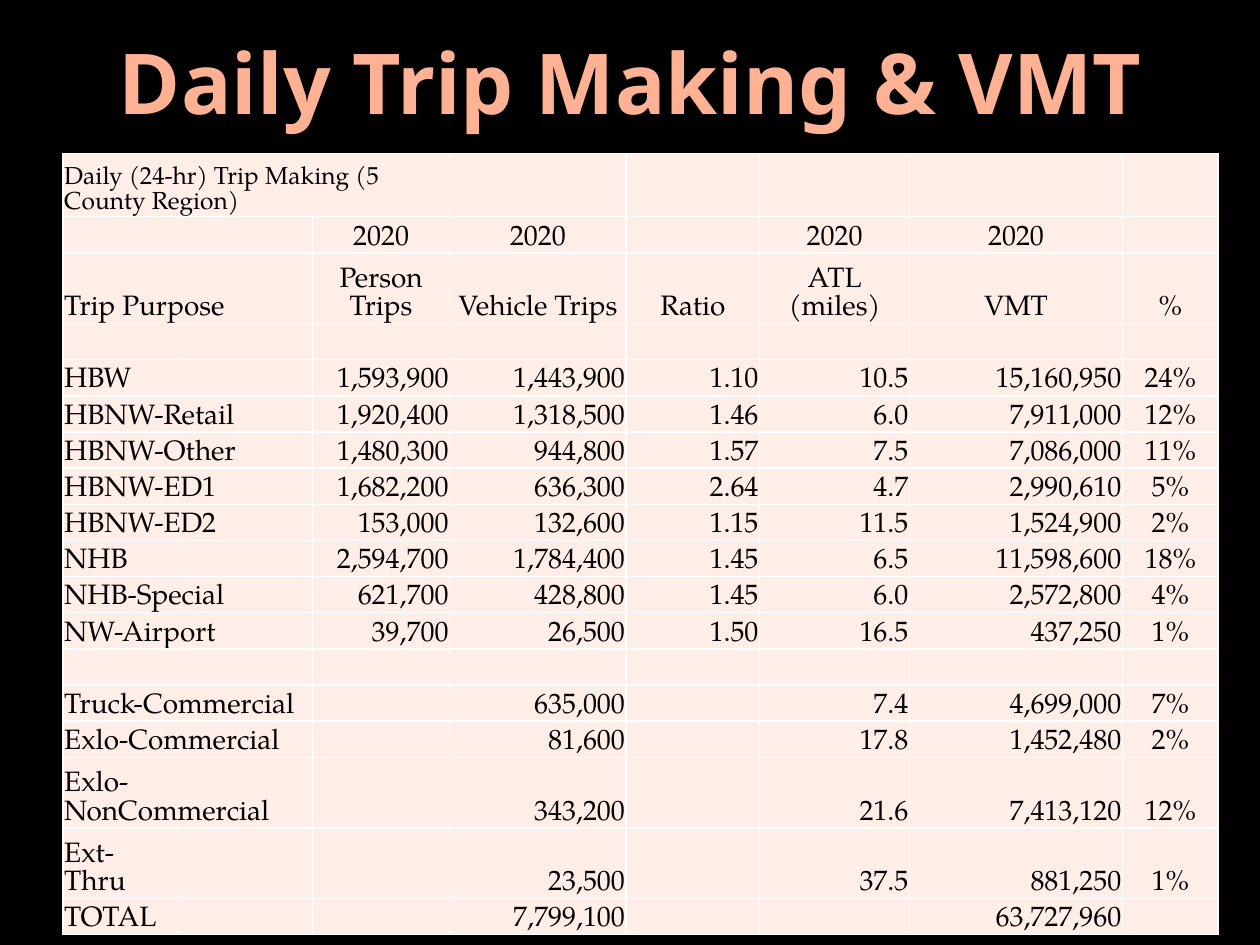
from dataclasses import dataclass

from lxml import etree
from pptx import Presentation
from pptx.dml.color import RGBColor
from pptx.enum.text import MSO_ANCHOR, PP_ALIGN
from pptx.oxml.ns import qn
from pptx.util import Inches, Pt

LEFT, CENTER, RIGHT = PP_ALIGN.LEFT, PP_ALIGN.CENTER, PP_ALIGN.RIGHT
MIDDLE, BOTTOM = MSO_ANCHOR.MIDDLE, MSO_ANCHOR.BOTTOM


@dataclass(frozen=True)
class Theme:
    background: str = "000000"
    title_stops: tuple = ((0, "FFB194"), (73, "FFB194"), (100, "FFA37C"))
    title_angle: int = 80
    cell_fill: str = "FFEDE8"
    border: str = "FFFFFF"
    text: str = "000000"
    title_font: str = "Noto Sans"
    table_font: str = "TeX Gyre Pagella"
    title_size: int = 48
    caption_size: int = 14
    table_size: int = 16
    border_width: int = 1


# Table content: label, person trips, vehicle trips, ratio, ATL, VMT, share
CAPTION = "Daily (24-hr) Trip Making (5 County Region)"
BLANK = [""] * 7
HEADERS = [
    ["", "2020", "2020", "", "2020", "2020", ""],
    ["Trip Purpose", "Person Trips", "Vehicle Trips", "Ratio", "ATL (miles)", "VMT", "%"],
]
TRIPS = [
    ["HBW", "1,593,900", "1,443,900", "1.10", "10.5", "15,160,950", "24%"],
    ["HBNW-Retail", "1,920,400", "1,318,500", "1.46", "6.0", "7,911,000", "12%"],
    ["HBNW-Other", "1,480,300", "944,800", "1.57", "7.5", "7,086,000", "11%"],
    ["HBNW-ED1", "1,682,200", "636,300", "2.64", "4.7", "2,990,610", "5%"],
    ["HBNW-ED2", "153,000", "132,600", "1.15", "11.5", "1,524,900", "2%"],
    ["NHB", "2,594,700", "1,784,400", "1.45", "6.5", "11,598,600", "18%"],
    ["NHB-Special", "621,700", "428,800", "1.45", "6.0", "2,572,800", "4%"],
    ["NW-Airport", "39,700", "26,500", "1.50", "16.5", "437,250", "1%"],
    BLANK,
    ["Truck-Commercial", "", "635,000", "", "7.4", "4,699,000", "7%"],
    ["Exlo-Commercial", "", "81,600", "", "17.8", "1,452,480", "2%"],
    ["Exlo-NonCommercial", "", "343,200", "", "21.6", "7,413,120", "12%"],
    ["Ext- Thru", "", "23,500", "", "37.5", "881,250", "1%"],
    ["TOTAL", "", "7,799,100", "", "", "63,727,960", ""],
]
ROWS = [[CAPTION] + BLANK[1:], *HEADERS, BLANK, *TRIPS]
HEADER_COUNT = 1 + len(HEADERS)
NARROW_LABELS = {"", "HBW", "NHB", "Ext- Thru", "TOTAL"}
TALL_LABELS = {"Trip Purpose", "Exlo-NonCommercial", "Ext- Thru"}

# Table geometry in inches
COLUMN_WIDTHS = [0.91, 1.07, 1.09, 1.4, 1.06, 1.19, 1.69, 0.76]
TABLE_HEIGHT, CAPTION_HEIGHT, TALL_HEIGHT = 6.2, 0.5, 0.56
NORMAL_HEIGHT = (TABLE_HEIGHT - CAPTION_HEIGHT - TALL_HEIGHT * len(TALL_LABELS)) / (
    len(ROWS) - 1 - len(TALL_LABELS))


class SlideBuilder:
    def __init__(self, slide, theme):
        self.slide = slide
        self.theme = theme
        fill = slide.background.fill
        fill.solid()
        fill.fore_color.rgb = RGBColor.from_string(theme.background)

    def title(self, text, left, top, width, height):
        theme = self.theme
        shape = self.slide.shapes.add_textbox(
            Inches(left), Inches(top), Inches(width), Inches(height))
        frame = shape.text_frame
        frame.word_wrap = True
        frame.vertical_anchor = MIDDLE
        frame.text = text
        paragraph = frame.paragraphs[0]
        paragraph.alignment = CENTER
        font = paragraph.runs[0].font
        font.name, font.size, font.bold = theme.title_font, Pt(theme.title_size), True
        self.gradient(font)

    def gradient(self, font):
        font.fill.gradient()
        gradient = font._element.find(qn("a:gradFill"))
        stops = gradient.find(qn("a:gsLst"))
        for stop in list(stops):
            stops.remove(stop)
        for position, color in self.theme.title_stops:
            stop = etree.SubElement(stops, qn("a:gs"), pos=str(position * 1000))
            etree.SubElement(stop, qn("a:srgbClr"), val=color)
        gradient.find(qn("a:lin")).set("ang", str(self.theme.title_angle * 60000))

    def table(self, left, top):
        frame = self.slide.shapes.add_table(
            len(ROWS), len(COLUMN_WIDTHS), Inches(left), Inches(top),
            Inches(sum(COLUMN_WIDTHS)), Inches(TABLE_HEIGHT))
        table = frame.table
        table.first_row = table.horz_banding = False
        for column, width in zip(table.columns, COLUMN_WIDTHS):
            column.width = Inches(width)

        for row_index, (label, *values) in enumerate(ROWS):
            is_caption = label == CAPTION
            height = TALL_HEIGHT if label in TALL_LABELS else NORMAL_HEIGHT
            table.rows[row_index].height = Inches(CAPTION_HEIGHT if is_caption else height)
            size = self.theme.caption_size if is_caption else self.theme.table_size
            # The label takes the first two columns
            for column_index, text in enumerate([label, "", *values]):
                if column_index == 0:
                    alignment = LEFT
                elif row_index < HEADER_COUNT or column_index == len(COLUMN_WIDTHS) - 1:
                    alignment = CENTER
                else:
                    alignment = RIGHT
                self.cell(table.cell(row_index, column_index), text, alignment, size)
            if label not in NARROW_LABELS:
                last_column = 2 if is_caption else 1
                table.cell(row_index, 0).merge(table.cell(row_index, last_column))

    def cell(self, cell, text, alignment, size):
        theme = self.theme
        self.borders(cell)
        cell.fill.solid()
        cell.fill.fore_color.rgb = RGBColor.from_string(theme.cell_fill)
        cell.margin_left = cell.margin_right = cell.margin_top = Inches(0.01)
        cell.margin_bottom = 0
        cell.vertical_anchor = BOTTOM
        paragraph = cell.text_frame.paragraphs[0]
        paragraph.alignment = alignment
        if not text:
            # Empty cells keep the table type size so that rows do not grow
            etree.SubElement(paragraph._p, qn("a:endParaRPr"), sz=str(size * 100))
            return
        paragraph.text = text
        font = paragraph.runs[0].font
        font.name, font.size = theme.table_font, Pt(size)
        font.color.rgb = RGBColor.from_string(theme.text)

    def borders(self, cell):
        properties = cell._tc.get_or_add_tcPr()
        for side in ("a:lnL", "a:lnR", "a:lnT", "a:lnB"):
            line = etree.SubElement(
                properties, qn(side), w=str(Pt(self.theme.border_width)))
            fill = etree.SubElement(line, qn("a:solidFill"))
            etree.SubElement(fill, qn("a:srgbClr"), val=self.theme.border)


def main():
    presentation = Presentation()
    presentation.slide_width, presentation.slide_height = Inches(10), Inches(7.5)
    slide = presentation.slides.add_slide(presentation.slide_layouts[6])
    builder = SlideBuilder(slide, Theme())
    builder.title("Daily Trip Making & VMT", 0.5, 0.08, 9, 1.13)
    builder.table(0.5, 1.22)
    presentation.save("out.pptx")


if __name__ == "__main__":
    main()
